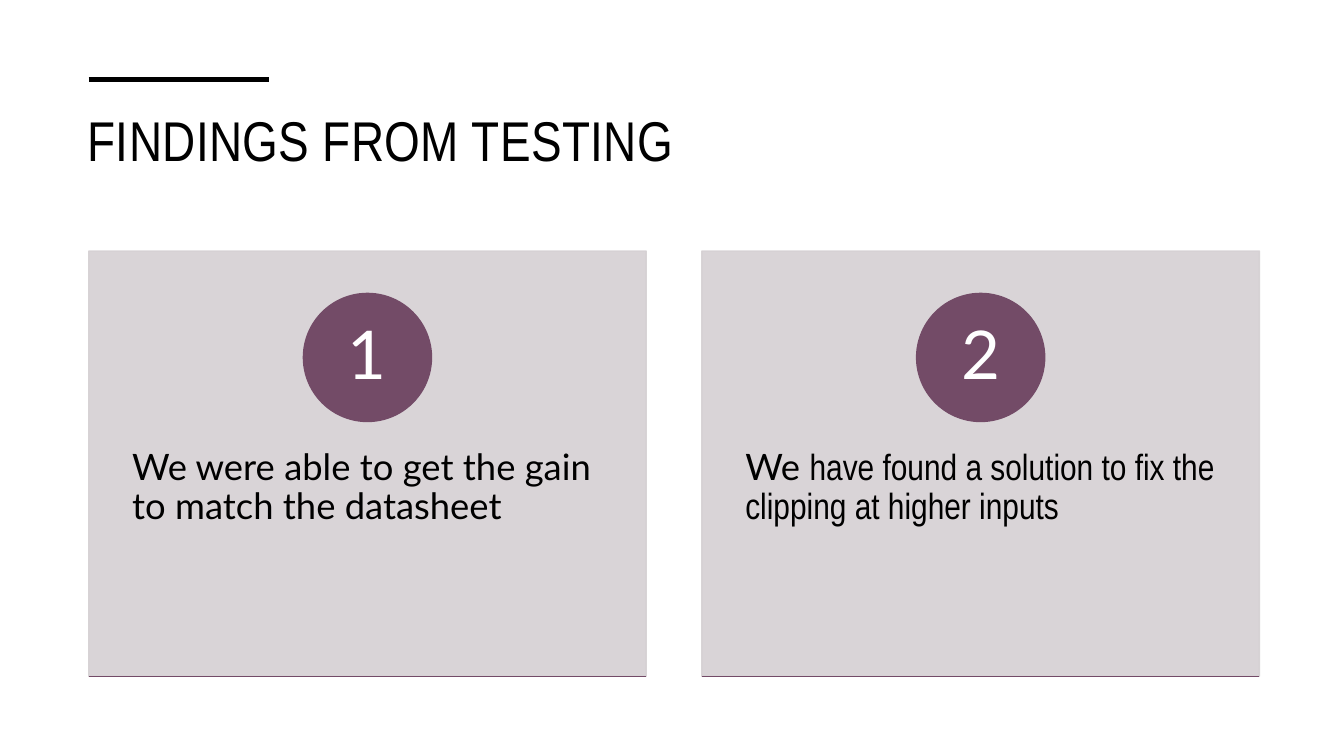
from typing import NamedTuple

from lxml.etree import SubElement
from pptx import Presentation
from pptx.dml.color import RGBColor
from pptx.enum.shapes import MSO_CONNECTOR, MSO_SHAPE
from pptx.enum.text import MSO_ANCHOR, PP_ALIGN
from pptx.oxml.ns import qn
from pptx.util import Pt

COLORS = {"ink": "000000", "card": "D5D0D3", "accent": "734B67", "white": "FFFFFF"}
BODY_FONT, NARROW_FONT = "Lato", "Arial Narrow"

LEFT = 63.4
CARD_TOP, CARD_WIDTH, CARD_HEIGHT = 179.3, 398.2, 303.8
CARD_PITCH = 438
BADGE_TOP, BADGE_SIZE, NUMBER_SIZE = 209.6, 91.5, 64
FINDING_TOP, FINDING_HEIGHT = 294.5, 182


class Box(NamedTuple):
    left: float
    top: float
    width: float
    height: float

    def in_points(self) -> tuple:
        return tuple(Pt(length) for length in self)


class TextStyle(NamedTuple):
    size: float
    font: str
    color: str
    margin_x: float
    margin_y: float
    line_spacing: float = 1.0
    align: PP_ALIGN = PP_ALIGN.LEFT
    anchor: MSO_ANCHOR = MSO_ANCHOR.TOP


class Phrase(NamedTuple):
    text: str
    font: str


class Finding(NamedTuple):
    number: str
    phrases: list[Phrase]


TITLE = TextStyle(40, NARROW_FONT, "ink", 7.2, 3.6)
FINDING = TextStyle(26, BODY_FONT, "ink", 31, 26, 0.9)
NUMBER = TextStyle(48, BODY_FONT, "white", 7.2, 0.7, 0.9,
                   PP_ALIGN.CENTER, MSO_ANCHOR.MIDDLE)

FINDINGS = [
    Finding("1", [Phrase("We were able to get the gain to match the datasheet", BODY_FONT)]),
    Finding("2", [Phrase("We ", BODY_FONT),
                  Phrase("have found a solution to fix the clipping at higher inputs",
                         NARROW_FONT)]),
]


def rgb(name: str) -> RGBColor:
    return RGBColor.from_string(COLORS[name])


def add_filled(slide, kind: MSO_SHAPE, box: Box, color: str, opacity: int = 100) -> None:
    """Add a shape whose fill and outline share one colour and opacity (percent)."""
    shape = slide.shapes.add_shape(kind, *box.in_points())
    shape.shadow.inherit = False
    shape.fill.solid()
    shape.fill.fore_color.rgb = rgb(color)
    shape.line.color.rgb = rgb(color)
    shape.line.width = Pt(1)
    if opacity < 100:
        for tint in shape._element.spPr.iter(qn("a:srgbClr")):
            SubElement(tint, qn("a:alpha"), val=str(opacity * 1000))


def add_rule(slide, left: float, top: float, width: float, color: str, weight: float) -> None:
    rule = slide.shapes.add_connector(
        MSO_CONNECTOR.STRAIGHT, Pt(left), Pt(top), Pt(left + width), Pt(top))
    rule.line.color.rgb = rgb(color)
    rule.line.width = Pt(weight)
    SubElement(rule._element.spPr, qn("a:effectLst"))


def add_text(slide, box: Box, phrases: list[Phrase], style: TextStyle):
    """Add a one-paragraph text box and return its paragraph."""
    frame = slide.shapes.add_textbox(*box.in_points()).text_frame
    frame.word_wrap = True
    frame.vertical_anchor = style.anchor
    frame.margin_left = frame.margin_right = Pt(style.margin_x)
    frame.margin_top = frame.margin_bottom = Pt(style.margin_y)
    paragraph = frame.paragraphs[0]
    paragraph.alignment = style.align
    paragraph.line_spacing = style.line_spacing
    paragraph.font.size = Pt(style.size)
    paragraph.font.name = style.font
    paragraph.font.color.rgb = rgb(style.color)
    for phrase in phrases:
        run = paragraph.add_run()
        run.text = phrase.text
        if phrase.font != style.font:
            run.font.name = phrase.font
    return paragraph


def add_card(slide, left: float, finding: Finding) -> None:
    add_filled(slide, MSO_SHAPE.RECTANGLE,
               Box(left, CARD_TOP, CARD_WIDTH, CARD_HEIGHT), "card", opacity=90)
    add_text(slide, Box(left, FINDING_TOP, CARD_WIDTH, FINDING_HEIGHT),
             finding.phrases, FINDING)
    badge_left = left + (CARD_WIDTH - BADGE_SIZE) / 2
    add_filled(slide, MSO_SHAPE.OVAL,
               Box(badge_left, BADGE_TOP, BADGE_SIZE, BADGE_SIZE), "accent")
    inset = (BADGE_SIZE - NUMBER_SIZE) / 2
    add_text(slide, Box(badge_left + inset, BADGE_TOP + inset, NUMBER_SIZE, NUMBER_SIZE),
             [Phrase(finding.number, BODY_FONT)], NUMBER)
    add_rule(slide, left, CARD_TOP + CARD_HEIGHT, CARD_WIDTH, "accent", 1)


def main() -> None:
    presentation = Presentation()
    presentation.slide_width, presentation.slide_height = Pt(960), Pt(540)
    slide = presentation.slides.add_slide(presentation.slide_layouts[6])

    title = add_text(slide, Box(55.5, 72, 850, 83),
                     [Phrase("FINDINGS FROM TESTING", NARROW_FONT)], TITLE)
    title.runs[0].font._element.set("spc", "30")
    add_rule(slide, LEFT, 56.9, 129, "ink", 3.5)
    for column, finding in enumerate(FINDINGS):
        add_card(slide, LEFT + column * CARD_PITCH, finding)

    presentation.save("out.pptx")


if __name__ == "__main__":
    main()
